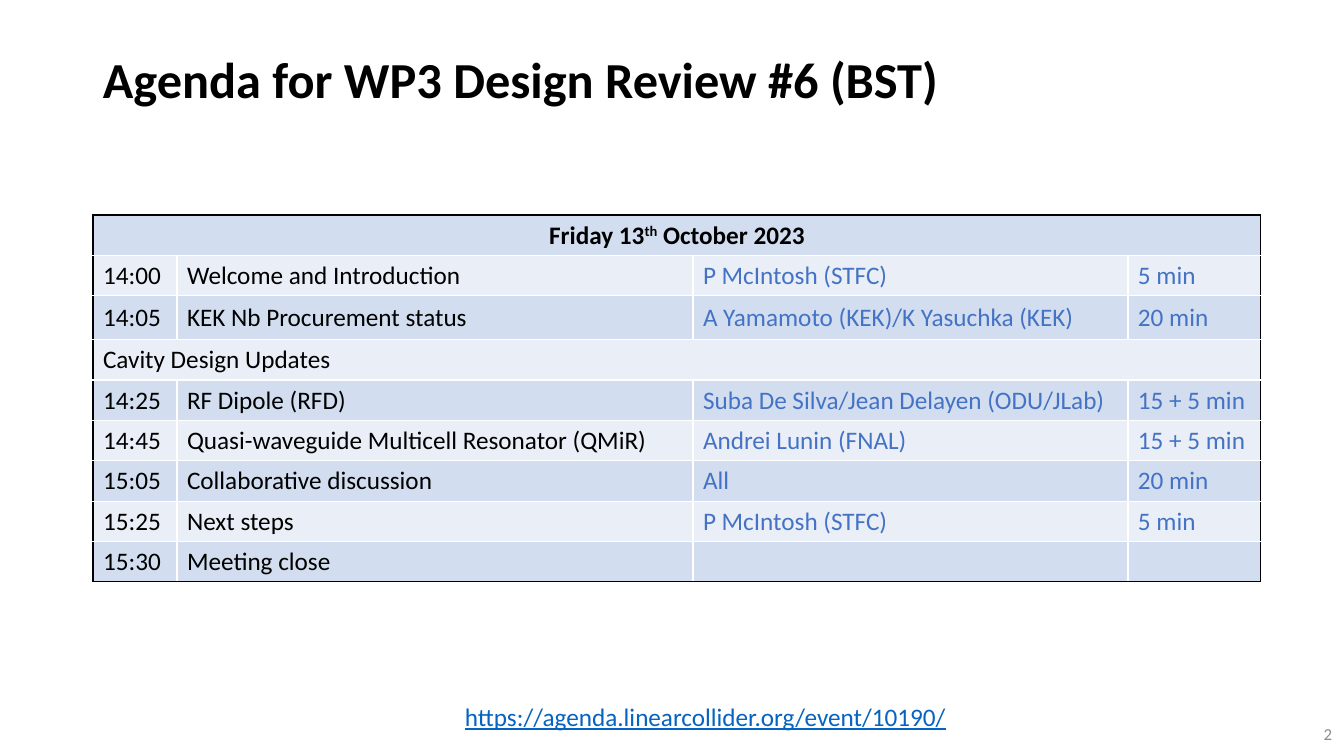
import pptx
import pptx.util
import pptx.dml.color
import pptx.enum.text
import pptx.oxml
import pptx.oxml.ns

RGBColor = pptx.dml.color.RGBColor
ALIGN = pptx.enum.text.PP_ALIGN
ANCHOR = pptx.enum.text.MSO_ANCHOR

BLACK = RGBColor(0x00, 0x00, 0x00)
WHITE = RGBColor(0xFF, 0xFF, 0xFF)
GREY = RGBColor(0x8C, 0x8C, 0x8C)
SPEAKER_BLUE = RGBColor(0x44, 0x72, 0xC4)
LINK_BLUE = RGBColor(0x05, 0x63, 0xC1)
BANDS = (RGBColor(0xD2, 0xDE, 0xEF), RGBColor(0xEA, 0xEF, 0xF7))

FONT = "Calibri"
EMU_PER_PX = 914400 / 100.8
COLUMNS = (84, 516, 435, 133)
ROW_HEIGHTS = (30, 30, 44, 30, 30, 30, 30, 30, 30)
DATE = (("Friday 13", False), ("th", True), (" October 2023", False))
AGENDA = (
    (DATE,),
    ("14:00", "Welcome and Introduction", "P McIntosh (STFC)", "5 min"),
    ("14:05", "KEK Nb Procurement status", "A Yamamoto (KEK)/K Yasuchka (KEK)", "20 min"),
    ("Cavity Design Updates",),
    ("14:25", "RF Dipole (RFD)", "Suba De Silva/Jean Delayen (ODU/JLab)", "15 + 5 min"),
    ("14:45", "Quasi-waveguide Multicell Resonator (QMiR)", "Andrei Lunin (FNAL)", "15 + 5 min"),
    ("15:05", "Collaborative discussion", "All", "20 min"),
    ("15:25", "Next steps", "P McIntosh (STFC)", "5 min"),
    ("15:30", "Meeting close", "", ""),
)


def px(n):
    return pptx.util.Emu(round(n * EMU_PER_PX))


def set_font(p, size, color, bold=False, underline=False):
    p.font.name = FONT
    p.font.size = pptx.util.Pt(size)
    p.font.color.rgb = color
    p.font.bold = bold
    p.font.underline = underline


def add_text(s, box, text, size, color, anchor=ANCHOR.MIDDLE, align=ALIGN.LEFT,
             spacing=1.0, bold=False, underline=False):
    tf = s.shapes.add_textbox(*map(px, box)).text_frame
    tf.word_wrap = True
    tf.vertical_anchor = anchor
    p = tf.paragraphs[0]
    p.text = text
    p.alignment = align
    p.line_spacing = spacing
    set_font(p, size, color, bold, underline)


def set_borders(cell, colors):
    tcPr = cell._tc.get_or_add_tcPr()
    for i, (side, color) in enumerate(zip("LRTB", colors)):
        ln = pptx.oxml.parse_xml(
            f'<a:ln{side} {pptx.oxml.ns.nsdecls("a")} w="12700"><a:solidFill>'
            f'<a:srgbClr val="{color}"/></a:solidFill></a:ln{side}>')
        tcPr.insert(i, ln)


def fill_date(p):
    for text, raised in DATE:
        r = p.add_run()
        r.text = text
        if raised:
            r._r.get_or_add_rPr().set("baseline", "30000")
    p.alignment = ALIGN.CENTER
    set_font(p, 18, BLACK, bold=True)


def add_agenda(s, box):
    last_row, last_col = len(AGENDA) - 1, len(COLUMNS) - 1
    table = s.shapes.add_table(last_row + 1, last_col + 1, *map(px, box)).table
    for column, width in zip(table.columns, COLUMNS):
        column.width = px(width)
    for i, entries in enumerate(AGENDA):
        table.rows[i].height = px(ROW_HEIGHTS[i])
        spans = len(entries) == 1
        if spans:
            table.cell(i, 0).merge(table.cell(i, last_col))
        for j in range(last_col + 1):
            cell = table.cell(i, j)
            cell.vertical_anchor = ANCHOR.MIDDLE
            cell.fill.solid()
            cell.fill.fore_color.rgb = BANDS[i % 2]
            edges = (j == 0, spans or j == last_col, i == 0, i == last_row)
            set_borders(cell, [BLACK if edge else WHITE for edge in edges])
        for j, entry in enumerate(entries):
            p = table.cell(i, j).text_frame.paragraphs[0]
            if entry is DATE:
                fill_date(p)
            else:
                p.text = entry
                set_font(p, 18, BLACK if j < 2 else SPEAKER_BLUE)


def agenda_slide(prs):
    s = prs.slides.add_slide(prs.slide_layouts[6])
    add_text(s, (93, 40, 1159, 85), "Agenda for WP3 Design Review #6 (BST)",
             36, BLACK, spacing=0.9, bold=True)
    add_text(s, (1040, 714, 302, 40), "2", 12, GREY, align=ALIGN.RIGHT)
    add_agenda(s, (93, 215, sum(COLUMNS), sum(ROW_HEIGHTS)))
    add_text(s, (455, 696, 672, 50), "https://agenda.linearcollider.org/event/10190/",
             18, LINK_BLUE, anchor=ANCHOR.TOP, underline=True)


def main():
    prs = pptx.Presentation()
    prs.slide_width = px(1344)
    prs.slide_height = px(756)
    agenda_slide(prs)
    prs.save("out.pptx")


if __name__ == "__main__":
    main()
